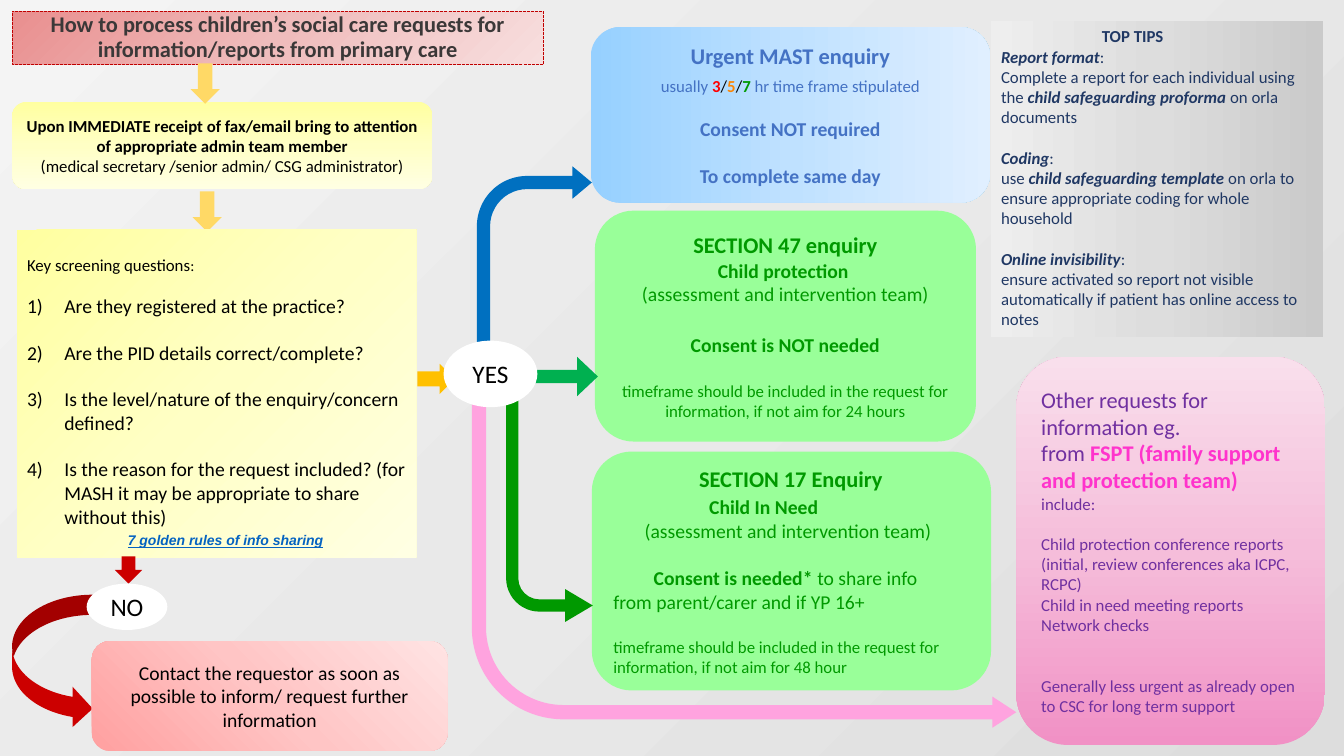
from copy import deepcopy

from pptx import Presentation, util as u
from pptx.dml.color import RGBColor
from pptx.enum import dml, shapes, text
from pptx.oxml import parse_xml

INK = {
    "black": "000000", "char": "3B3838", "navy": "203864", "blue": "4472C4",
    "link": "0563C1", "green": "009900", "red": "FF0000", "amber": "FC8604",
    "plum": "7030A0", "pink": "FF33CC", "rim": "C00000", "white": "FFFFFF",
    "mint": "99FF99", "gold": "FFD966", "stop": "CC0000", "go": "FFC000",
    "leaf": "00B050", "azure": "0070C0", "rose": "FFA3DF",
}
FADE = {
    "page": ("DDDDDD", "E9E9E9", "F4F4F4"), "coral": ("E98F8F", "EFBCBC", "F7DEDE"),
    "lemon": ("FFFFA0", "FFFFC5", "FFFFE3"), "salmon": ("FFA0A0", "FFC5C5", "FFE3E3"),
    "sky": ("96D0FF", "BFE1FF", "E0EFFF"), "candy": ("F191C5", "F5BDDA", "F9DFEC"),
    "steel": ("CACACA", "DDDDDD", "EEEEEE"),
}
KIND = shapes.MSO_SHAPE
MID, TOP = text.MSO_ANCHOR.MIDDLE, text.MSO_ANCHOR.TOP
LEFT, CENTER = text.PP_ALIGN.LEFT, text.PP_ALIGN.CENTER
LINE = 1.22  # line height of Calibri per point of size
NUMBER = ('<a:buAutoNum xmlns:a="http://schemas.openxmlformats.org/drawingml/2006/main"'
          ' type="arabicParenR"/>')


def rgb(name):
    return RGBColor.from_string(INK.get(name, name))


def paint(fill, name, turn=0):
    """Fill with a flat ink, or with a three-stop fade turned clockwise."""
    if name in INK:
        fill.solid()
        fill.fore_color.rgb = rgb(name)
        return
    fill.gradient()
    fill.gradient_angle = -turn % 360
    first = fill.gradient_stops[0]._gs
    first.addnext(deepcopy(first))
    for i, (stop, shade) in enumerate(zip(fill.gradient_stops, FADE[name])):
        stop.color.rgb = rgb(shade)
        stop.position = i / 2


def para(*runs, gap=0, left=0, first=0, number=False):
    """Runs are (text, format) pairs; gap is the type size of a skipped line."""
    return dict(runs=runs, gap=gap, left=left, first=first, number=number)


def write(shape, paras, base, align=CENTER, anchor=MID, top=0.05):
    frame = shape.text_frame
    form = dict(word_wrap=True, auto_size=text.MSO_AUTO_SIZE.NONE,
                vertical_anchor=anchor, margin_top=u.Inches(top))
    for key, value in form.items():
        setattr(frame, key, value)
    for i, item in enumerate(paras):
        p = frame.add_paragraph() if i else frame.paragraphs[0]
        p.alignment = align
        if item["gap"]:
            p.space_before = u.Pt(round(LINE * item["gap"], 1))
        props = p._p.get_or_add_pPr()
        props.set("marL", str(u.Inches(item["left"])))
        props.set("indent", str(u.Inches(item["first"])))
        if item["number"]:
            props.append(parse_xml(NUMBER))
        for words, extra in item["runs"]:
            if words == "\n":
                p.add_line_break()
                continue
            run = p.add_run()
            run.text = words
            font = {"name": "Calibri", "bold": False, "color": "black", **base, **extra}
            run.font.color.rgb = rgb(font.pop("color"))
            run.font.size = u.Pt(font.pop("size"))
            for key, value in font.items():
                setattr(run.font, key, value)


def add(slide, kind, box, part, ink, turn=0, adj=(), flip=False):
    """Place a shape; part is left, top, width, height within the box."""
    x, y = box[0] + part[0], box[1] + part[1]
    shape = slide.shapes.add_shape(kind, *map(u.Inches, (x, y, part[2], part[3])))
    shape.shadow.inherit = False
    shape.line.fill.background()
    paint(shape.fill, ink, turn)
    for i, value in enumerate(adj):
        shape.adjustments[i] = value
    if flip:
        shape._element.spPr.get_or_add_xfrm().set("flipV", "1")
    return shape


def panel(slide, kind, box, ink, turn=0):
    return add(slide, kind, box, (0, 0, box[2], box[3]), ink, turn)


B, PLAIN, BI = dict(bold=True), {}, dict(bold=True, italic=True)
HEAD, SUB, SMALL = dict(size=16, bold=True), dict(size=14, bold=True), dict(size=12)


def title(slide, box):
    shape = slide.shapes.title
    for key, value in zip(("left", "top", "width", "height"), box):
        setattr(shape, key, u.Inches(value))
    paint(shape.fill, "coral", 45)
    shape.line.color.rgb = rgb("rim")
    shape.line.width = u.Pt(0.75)
    shape.line.dash_style = dml.MSO_LINE.SQUARE_DOT
    write(shape, [para(("How to process children’s social care requests for "
                        "information/reports from primary care", B))],
          dict(size=16, color="char"))
    shape.text_frame.paragraphs[0].line_spacing = 0.9


def receipt(slide, box):
    shape = panel(slide, KIND.ROUNDED_RECTANGLE, box, "lemon", 90)
    write(shape, [
        para(("Upon IMMEDIATE receipt of fax/email bring to attention of "
              "appropriate admin team member", B)),
        para(("(medical secretary /senior admin/ CSG administrator)", PLAIN)),
    ], SMALL)
    for x, y in ((1.77, -0.38), (1.79, 0.89)):
        add(slide, KIND.DOWN_ARROW, box, (x, y, 0.29, 0.4), "gold")


def screen(slide, box):
    asks = ("Are they registered at the practice?",
            "Are the PID details correct/complete?",
            "Is the level/nature of the enquiry/concern defined?",
            "Is the reason for the request included? (for MASH it may be "
            "appropriate to share without this)")
    rule = dict(size=10, name="Arial", color="link", underline=True, **BI)
    paras = [para(("Key screening questions", SMALL), (":", dict(size=11)))]
    paras += [para((ask, PLAIN), gap=13.5 if i else 11, left=0.37, first=-0.37, number=True)
              for i, ask in enumerate(asks)]
    paras.append(para(("7 golden rules of info sharing", rule), gap=2, left=1))
    write(panel(slide, KIND.RECTANGLE, box, "lemon", 45), paras, dict(size=14),
          LEFT, TOP, 0.25)


def refuse(slide, box):
    add(slide, KIND.CURVED_RIGHT_ARROW, box, (0, 0.38, 0.8, 1.33), "stop")
    add(slide, KIND.DOWN_ARROW, box, (1.02, 0, 0.27, 0.27), "stop")
    oval = add(slide, KIND.OVAL, box, (0.74, 0.27, 0.8, 0.46), "white")
    write(oval, [para(("NO", PLAIN))], dict(size=18))
    shape = add(slide, KIND.ROUNDED_RECTANGLE, box, (0.79, 0.84, 3.53, 1.09), "salmon", 315)
    write(shape, [para(("Contact the requestor as soon as possible to inform/ "
                        "request further information", PLAIN))], dict(size=14))


def routes(slide, box):
    """Draw the YES hub and the arrows that leave it."""
    arrow, bend = KIND.RIGHT_ARROW, KIND.BENT_ARROW
    for kind, part, ink, adj, flip in (
        (arrow, (0, 1.96, 0.37, 0.3), "go", (), False),
        (arrow, (0.98, 1.89, 0.81, 0.39), "leaf", (0.338, 0.528), False),
        (bend, (0.59, 0, 1.14, 1.89), "azure", (0.115, 0.141, 0.168, 0.438), False),
        (bend, (0.88, 2.32, 0.86, 2.2), "green", (0.141, 0.189, 0.318, 0.385), True),
        (bend, (0.54, 2.28, 5.4, 3.29), "rose", (0.043, 0.047, 0.072, 0.277), True),
    ):
        add(slide, kind, box, part, ink, adj=adj, flip=flip)
    oval = add(slide, KIND.OVAL, box, (0.26, 1.73, 0.93, 0.66), "white")
    write(oval, [para(("YES", PLAIN))], dict(size=18))


def urgent(slide, box):
    tone = dict(color="black")
    write(panel(slide, KIND.ROUNDED_RECTANGLE, box, "sky"), [
        para(("Urgent MAST enquiry", HEAD)),
        para(("usually ", PLAIN), ("3", dict(color="red", **B)), ("/", tone),
             ("5", dict(color="amber", **B)), ("/", tone),
             ("7 ", dict(color="green", **B)), ("hr time frame stipulated", PLAIN), gap=4),
        para(("Consent NOT required", SUB), gap=12),
        para(("To complete same day", SUB), gap=14),
    ], dict(size=12, color="blue"))


def protect(slide, box):
    write(panel(slide, KIND.ROUNDED_RECTANGLE, box, "mint"), [
        para(("SECTION 47 enquiry", HEAD)),
        para(("Child protection ", B)),
        para(("(assessment and intervention team)", PLAIN)),
        para(("Consent is NOT needed", B), gap=16),
        para(("timeframe should be included in the request for information, "
              "if not aim for 24 hours", SMALL), gap=14),
    ], dict(size=14, color="green"))


def need(slide, box):
    write(panel(slide, KIND.ROUNDED_RECTANGLE, box, "mint"), [
        para(("SECTION 17 Enquiry", HEAD), left=0.85),
        para(("Child In Need", B), gap=2, left=0.95),
        para(("(assessment and intervention team)", PLAIN), left=0.31),
        para(("Consent is needed* ", B), ("to share info", PLAIN), ("\n", PLAIN),
             ("from parent/carer and if YP 16+", PLAIN), gap=14, first=0.4),
        para(("timeframe should be included in the request for information, "
              "if not aim for 48 hour", SMALL), gap=14),
    ], dict(size=14, color="green"), LEFT)


def others(slide, box):
    big = dict(size=16)
    write(panel(slide, KIND.ROUNDED_RECTANGLE, box, "candy", 270), [
        para(("Other requests for information eg.", big)),
        para(("from ", big), ("FSPT (family support and protection team)",
                              dict(color="pink", **HEAD))),
        para(("include:", PLAIN)),
        para(("Child protection conference reports (initial, review conferences "
              "aka ICPC, RCPC)", PLAIN), gap=12),
        para(("Child in need meeting reports", PLAIN)),
        para(("Network checks", PLAIN)),
        para(("Generally less urgent as already open to CSC for long term support",
              PLAIN), gap=24),
    ], dict(size=12, color="plum"), LEFT)


def tips(slide, box):
    paras = [para(("TOP TIPS", B), left=1)]
    for i, (topic, *runs) in enumerate((
        ("Report format", ("Complete a report for each individual using the ", PLAIN),
         ("child safeguarding proforma", BI), (" on orla documents", PLAIN)),
        ("Coding", ("use ", PLAIN), ("child safeguarding template ", BI),
         ("on orla to ensure appropriate coding for whole household", PLAIN)),
        ("Online invisibility", ("ensure activated so report not visible automatically "
                                 "if patient has online access to notes", PLAIN)),
    )):
        paras += [para((topic, BI), (":", PLAIN), gap=12 if i else 0), para(*runs)]
    write(panel(slide, KIND.RECTANGLE, box, "steel", 180), paras,
          dict(size=12, color="navy"), LEFT, TOP)


def main():
    deck = Presentation()
    deck.slide_width, deck.slide_height = u.Inches(13.33), u.Inches(7.5)
    slide = deck.slides.add_slide(deck.slide_layouts[5])
    paint(slide.background.fill, "page", 225)
    for region, box in (
        (title, (0.12, 0.11, 5.27, 0.53)), (receipt, (0.12, 1.01, 4.17, 0.87)),
        (need, (5.87, 4.48, 3.96, 2.37)), (protect, (5.9, 2.09, 3.78, 2.29)),
        (urgent, (5.86, 0.27, 3.96, 1.74)), (others, (10.08, 3.54, 3.06, 3.85)),
        (screen, (0.17, 2.28, 3.96, 3.25)), (refuse, (0.12, 5.52, 4.32, 1.93)),
        (routes, (4.14, 1.65, 5.94, 5.57)), (tips, (9.83, 0.21, 3.29, 3.13)),
    ):
        region(slide, box)
    deck.save("out.pptx")


if __name__ == "__main__":
    main()
